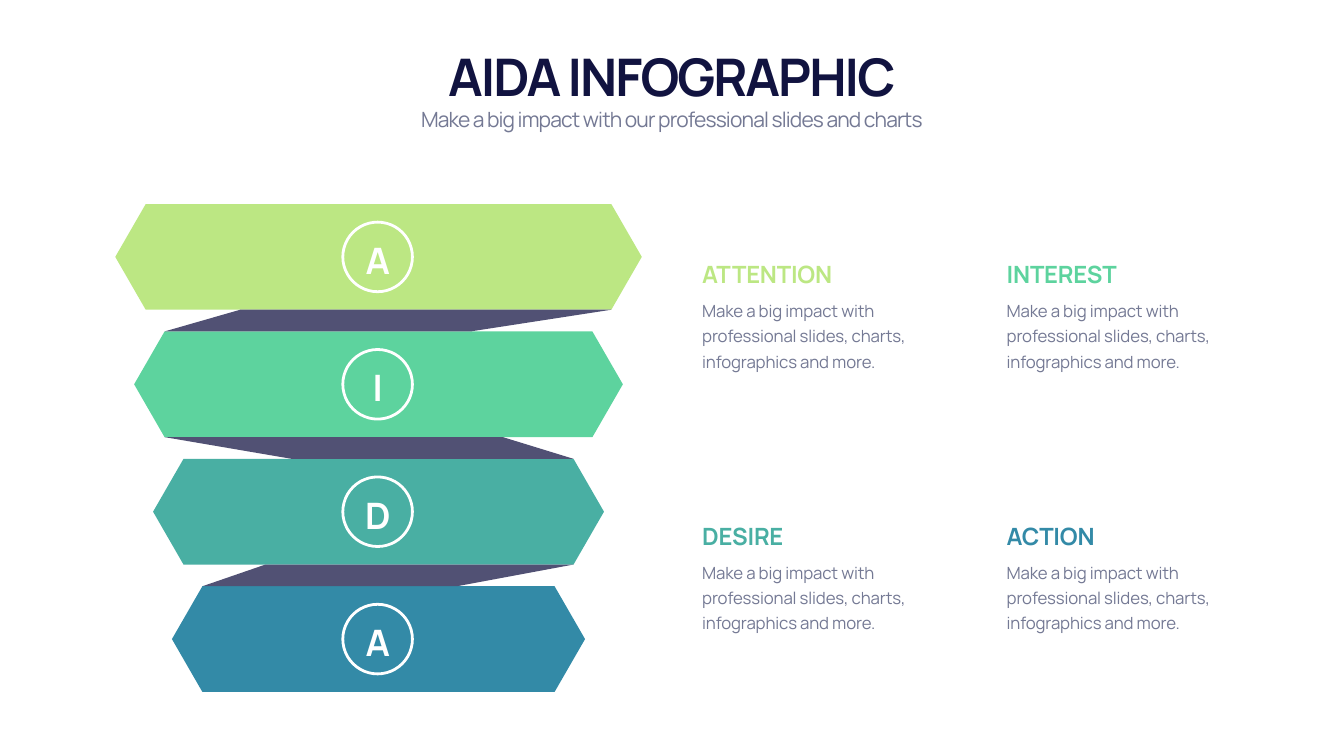
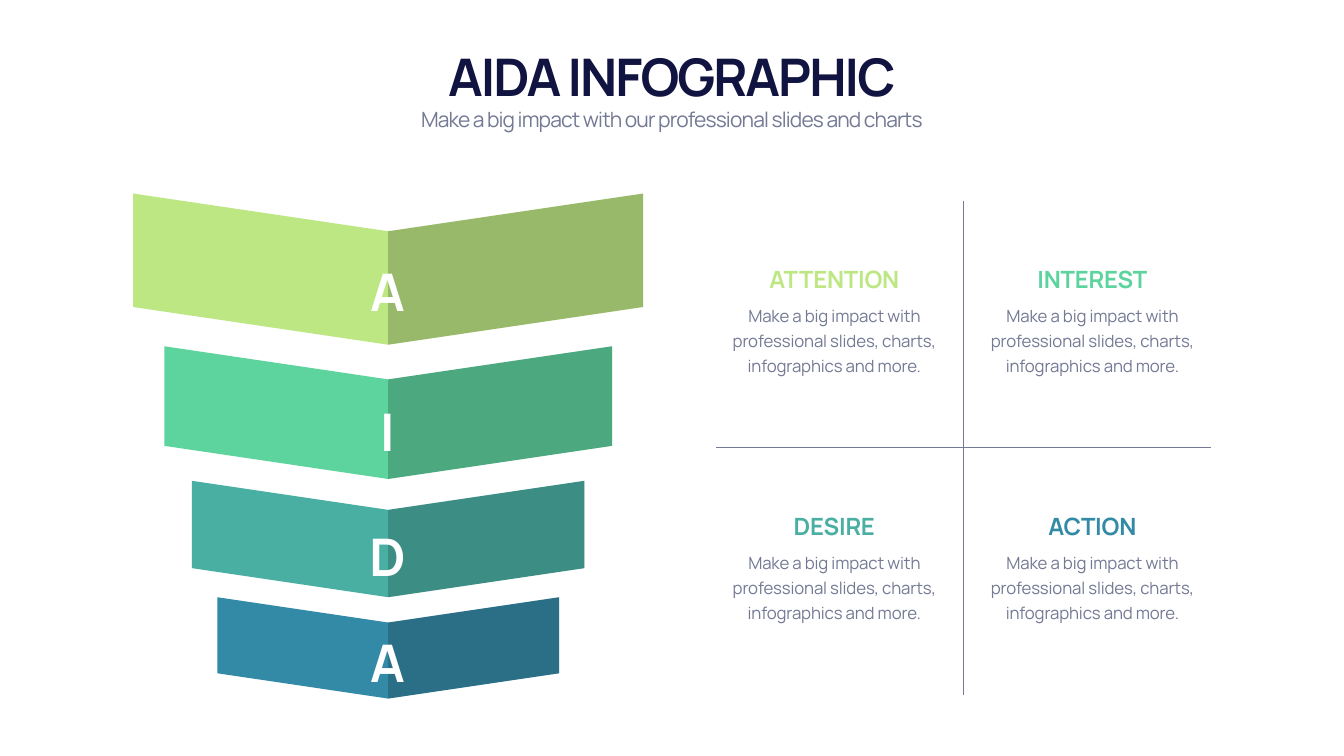
from dataclasses import dataclass, replace

from lxml import etree
from pptx import Presentation
from pptx import util as u
from pptx.dml.color import RGBColor
from pptx.enum import shapes, text
from pptx.oxml import ns

ALIGN = text.PP_ALIGN
ANCHOR = text.MSO_ANCHOR


@dataclass(frozen=True)
class Style:
    size: float
    color: str
    bold: bool = False
    spacing: int = 0
    leading: float = 0


@dataclass(frozen=True)
class Theme:
    font: str = "Manrope"
    rule: str = "747994"
    fold: str = "515174"
    shade: str = "0B0506"
    white: str = "FFFFFF"
    steps: tuple = ("BCE783", "5DD39E", "49AFA3", "338AA7")
    title: Style = Style(74, "111340", True, -290)
    subtitle: Style = Style(30, "747994", False, -120)
    heading: Style = Style(34, "111340", True, -30)
    body: Style = Style(24, "747994", False, -20, 36)
    badge: Style = Style(52, "FFFFFF", True, -30)
    initial: Style = Style(74, "FFFFFF", True, -290)


@dataclass(frozen=True)
class Box:
    x: float
    y: float
    w: float
    h: float

    @property
    def cx(self):
        return self.x + self.w / 2

    @property
    def cy(self):
        return self.y + self.h / 2

    def pts(self):
        return [u.Pt(v) for v in (self.x, self.y, self.w, self.h)]


THEME = Theme()
STEPS = ("ATTENTION", "INTEREST", "DESIRE", "ACTION")
BODY = "Make a big impact with professional slides, charts, infographics and more."


def apply(obj, formats):
    for name, value in formats.items():
        setattr(obj, name, value)


def add_text(slide, box, words, style, align=ALIGN.LEFT, anchor=ANCHOR.TOP):
    tf = slide.shapes.add_textbox(*box.pts()).text_frame
    apply(tf, {"word_wrap": True, "vertical_anchor": anchor,
               "auto_size": text.MSO_AUTO_SIZE.SHAPE_TO_FIT_TEXT})
    p = tf.paragraphs[0]
    p.alignment = align
    if style.leading:
        p.line_spacing = u.Pt(style.leading)
    r = p.add_run()
    r.text = words
    apply(r.font, {"name": THEME.font, "size": u.Pt(style.size), "bold": style.bold})
    r.font.color.rgb = RGBColor.from_string(style.color)
    r._r.get_or_add_rPr().set("spc", str(style.spacing))


def add_polygon(slide, points, color, opacity=100):
    corners = [(u.Pt(x), u.Pt(y)) for x, y in points]
    builder = slide.shapes.build_freeform(*corners[0])
    builder.add_line_segments(corners[1:], close=True)
    sp = builder.convert_to_shape()
    sp.shadow.inherit = False
    sp.fill.solid()
    sp.fill.fore_color.rgb = RGBColor.from_string(color)
    sp.line.fill.background()
    if opacity < 100:
        clr = sp._element.spPr.find(".//" + ns.qn("a:srgbClr"))
        etree.SubElement(clr, ns.qn("a:alpha"), val=str(opacity * 1000))


def add_rule(slide, x1, y1, x2, y2):
    line = slide.shapes.add_connector(
        shapes.MSO_CONNECTOR.STRAIGHT, *[u.Pt(v) for v in (x1, y1, x2, y2)])
    line.line.color.rgb = RGBColor.from_string(THEME.rule)
    line.line.width = u.Pt(1.5)
    etree.SubElement(line._element.spPr, ns.qn("a:effectLst"))


def header(slide, box):
    add_text(slide, replace(box, h=97.2), "AIDA INFOGRAPHIC",
             THEME.title, ALIGN.CENTER, ANCHOR.BOTTOM)
    add_text(slide, replace(box, y=box.y + 90, h=43.9),
             "Make a big impact with our professional slides and charts",
             THEME.subtitle, ALIGN.CENTER)


def step_grid(slide, box, col_w, row_h, align):
    for i, (name, color) in enumerate(zip(STEPS, THEME.steps)):
        row, col = divmod(i, 2)
        x = box.x + col * (box.w - col_w)
        y = box.y + row * (box.h - row_h)
        add_text(slide, Box(x, y, col_w, 48.2), name,
                 replace(THEME.heading, color=color), align, ANCHOR.BOTTOM)
        add_text(slide, Box(x, y + 51.8, col_w, 114.5), BODY, THEME.body, align)


def ribbon(slide, box):
    band_h, tip, shrink = 151, 43.5, 27
    pitch = (box.h - band_h) / (len(STEPS) - 1)
    bands = [Box(box.x + i * shrink, box.y + i * pitch, box.w - 2 * i * shrink, band_h)
             for i in range(len(STEPS))]
    for b, color in zip(bands, THEME.steps):
        left, right, bottom = b.x + tip, b.x + b.w - tip, b.y + b.h
        add_polygon(slide, [(left, b.y), (right, b.y), (b.x + b.w, b.cy),
                            (right, bottom), (left, bottom), (b.x, b.cy)], color)

    fold_insets = ((178.5, 507.5), (553.7, 252), (214.5, 488))
    for i, (top_inset, bottom_inset) in enumerate(fold_insets):
        upper, lower = bands[i], bands[i + 1]
        outer = upper if i % 2 == 0 else lower
        inner = lower if i % 2 == 0 else upper
        top_end, bottom_end = outer.x + outer.w - tip, inner.x + tip
        if i % 2:
            top_end, bottom_end = bottom_end, top_end
        y1, y2 = upper.y + band_h, lower.y
        add_polygon(slide, [(box.x + top_inset, y1), (top_end, y1),
                            (box.x + bottom_inset, y2), (bottom_end, y2)]
                    if i % 2 and False else
                    [(box.x + top_inset, y1), (top_end, y1),
                     (box.x + bottom_inset, y2), (bottom_end, y2)], THEME.fold)

    for b, name in zip(bands, STEPS):
        ring = slide.shapes.add_shape(
            shapes.MSO_SHAPE.OVAL, *Box(b.cx - 51, b.cy - 49.7, 99.4, 99.4).pts())
        ring.shadow.inherit = False
        ring.fill.background()
        ring.line.color.rgb = RGBColor.from_string(THEME.white)
        ring.line.width = u.Pt(4)
        add_text(slide, Box(b.cx - 44.6, b.cy - 31, 87.1, 70.6), name[0],
                 THEME.badge, ALIGN.CENTER, ANCHOR.MIDDLE)


def funnel(slide, box):
    drop_ratio, side_ratio = 0.148, 0.445
    tiers = ((364.2, 0), (319.7, 218.2), (280.4, 410.4), (244.1, 576.7))
    for (half, dy), name, color in zip(tiers, STEPS, THEME.steps):
        left, right, top = box.cx - half, box.cx + half, box.y + dy
        drop, side = half * drop_ratio, half * side_ratio
        height = drop + side
        spine = [(box.cx, top + height), (box.cx, top + drop)]
        right_edge = [(right, top), (right, top + side)]
        add_polygon(slide, [(left, top), spine[1], *right_edge, spine[0],
                            (left, top + side)], color)
        add_polygon(slide, spine + right_edge, THEME.shade, 20)
        add_text(slide, Box(box.cx - 65.6, top + 0.64 * height - 48.6, 129, 97.2),
                 name[0], THEME.initial, ALIGN.CENTER, ANCHOR.MIDDLE)


def cross(slide, box):
    add_rule(slide, box.cx, box.y, box.cx, box.y + box.h)
    add_rule(slide, box.x, box.cy, box.x + box.w, box.cy)


def ribbon_slide(slide):
    ribbon(slide, Box(164.6, 291.5, 752, 697))
    step_grid(slide, Box(995.8, 367.2, 795.6, 540), 360.7, 166.3, ALIGN.LEFT)


def funnel_slide(slide):
    funnel(slide, Box(190.2, 276.5, 728.4, 721.5))
    cross(slide, Box(1023.1, 286.6, 706.4, 706.4))
    step_grid(slide, Box(1028.9, 373.7, 694, 519.1), 325.4, 166.3, ALIGN.CENTER)


def main():
    prs = Presentation()
    apply(prs, {"slide_width": u.Pt(1919.52), "slide_height": u.Pt(1080)})
    for fill_slide in (ribbon_slide, funnel_slide):
        slide = prs.slides.add_slide(prs.slide_layouts[6])
        header(slide, Box(119.5, 59, 1679.8, 133))
        fill_slide(slide)
    prs.save("out.pptx")


if __name__ == "__main__":
    main()
